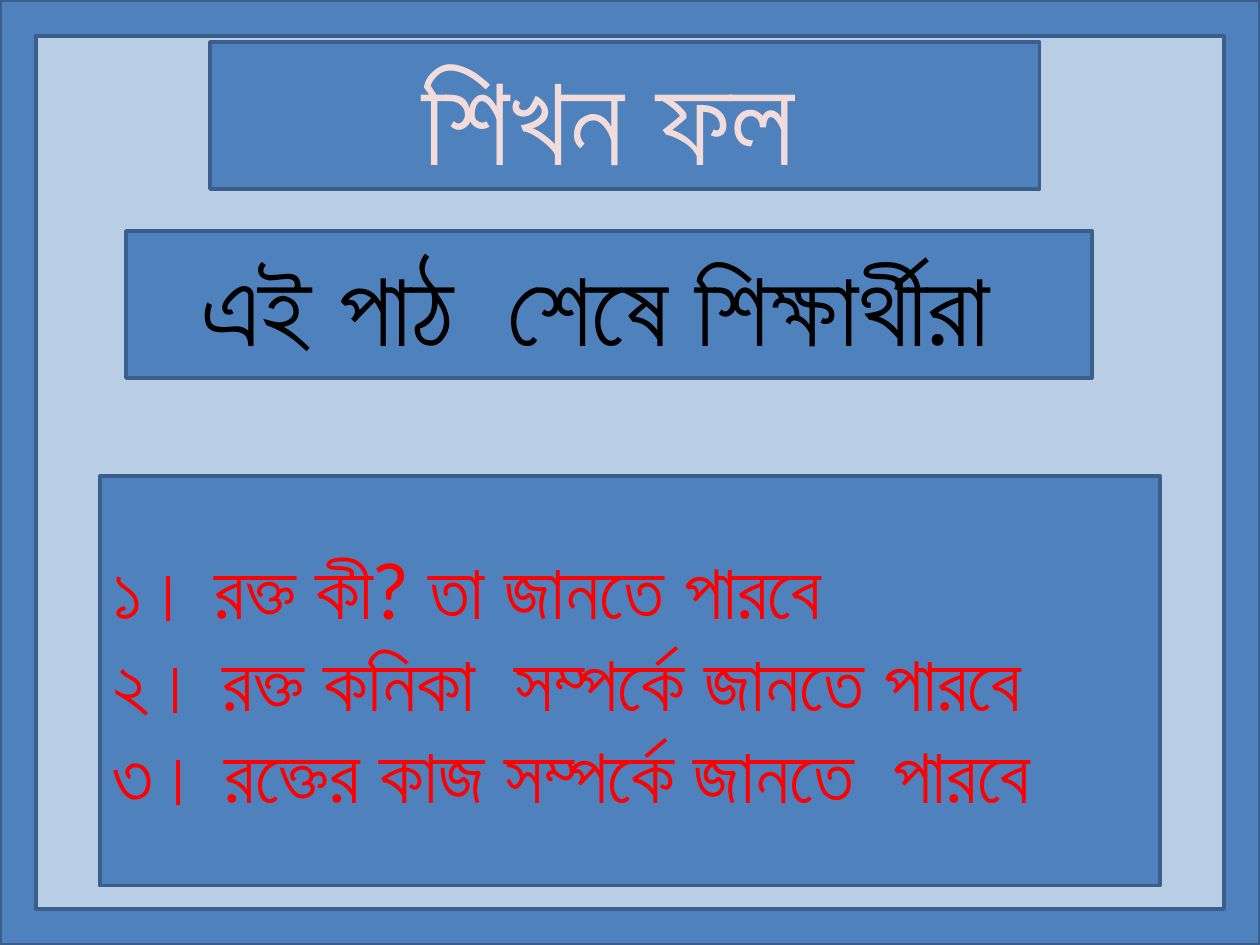
"""Build the learning outcomes slide with its framed border and three panels."""
from lxml import etree
from pptx import Presentation
from pptx.dml.color import RGBColor
from pptx.enum.shapes import MSO_SHAPE
from pptx.enum.text import MSO_ANCHOR, MSO_AUTO_SIZE, PP_ALIGN
from pptx.oxml.ns import qn
from pptx.util import Pt

FRAME, RECT = MSO_SHAPE.FRAME, MSO_SHAPE.RECTANGLE
MIDDLE, FIXED = MSO_ANCHOR.MIDDLE, MSO_AUTO_SIZE.NONE
LEFT, CENTER = PP_ALIGN.LEFT, PP_ALIGN.CENTER

THEME = {
    "font": "Lato",
    "back": RGBColor(0xB9, 0xCD, 0xE5),
    "fill": RGBColor(0x4F, 0x81, 0xBD),
    "line": RGBColor(0x3A, 0x5F, 0x8C),
    "title": (Pt(72), RGBColor(0xF2, 0xDC, 0xDB)),
    "intro": (Pt(60), RGBColor(0, 0, 0)),
    "list": (Pt(44), RGBColor(0xFF, 0, 0)),
}


def paint(shape):
    shape.fill.solid()
    shape.fill.fore_color.rgb = THEME["fill"]
    shape.line.color.rgb = THEME["line"]
    shape.line.width = Pt(2)
    shape.shadow.inherit = False


def write(shape, lines, style, align):
    size, color = THEME[style]
    frame = shape.text_frame
    frame.text = "\n".join(lines)
    for name, value in {"word_wrap": True, "auto_size": FIXED,
                        "vertical_anchor": MIDDLE}.items():
        setattr(frame, name, value)
    for para in frame.paragraphs:
        para.alignment = align
        para.space_before = Pt(0)
        props = para._p.get_or_add_pPr()
        props.set("marL", "0")
        props.set("indent", "0")
        etree.SubElement(props, qn("a:buNone"))
        font = para.runs[0].font
        for name, value in {"name": THEME["font"], "size": size}.items():
            setattr(font, name, value)
        font.color.rgb = color
        etree.SubElement(font._element, qn("a:cs"), typeface=THEME["font"])


deck = Presentation()
deck.slide_width, deck.slide_height = Pt(720), Pt(540)
slide = deck.slides.add_slide(deck.slide_layouts[1])
slide.background.fill.solid()
slide.background.fill.fore_color.rgb = THEME["back"]

border = slide.shapes.add_shape(FRAME, 0, 0, Pt(720), Pt(540))
border.adjustments[0] = 0.038
paint(border)
slide.shapes._spTree.insert(2, border._element)

title, body = slide.shapes.title, slide.placeholders[1]
intro = slide.shapes.add_shape(RECT, Pt(72), Pt(132), Pt(552), Pt(84))

for shape, form, box in [
    (title, "ellipse", (120, 24, 474, 84)),
    (body, "rect", (57, 272, 606, 234)),
]:
    for name, value in zip(("left", "top", "width", "height"), box):
        setattr(shape, name, Pt(value))
    geom = etree.SubElement(shape._element.spPr, qn("a:prstGeom"), prst=form)
    etree.SubElement(geom, qn("a:avLst"))

for shape, style, align, lines in [
    (title, "title", CENTER, ["শিখন ফল "]),
    (intro, "intro", CENTER, ["এই পাঠ  শেষে শিক্ষার্থীরা "]),
    (body, "list", LEFT, [
        "১। রক্ত কী? তা জানতে পারবে",
        "২। রক্ত কনিকা  সম্পর্কে জানতে পারবে",
        "৩। রক্তের কাজ সম্পর্কে জানতে  পারবে",
    ]),
]:
    paint(shape)
    write(shape, lines, style, align)

deck.save("out.pptx")
